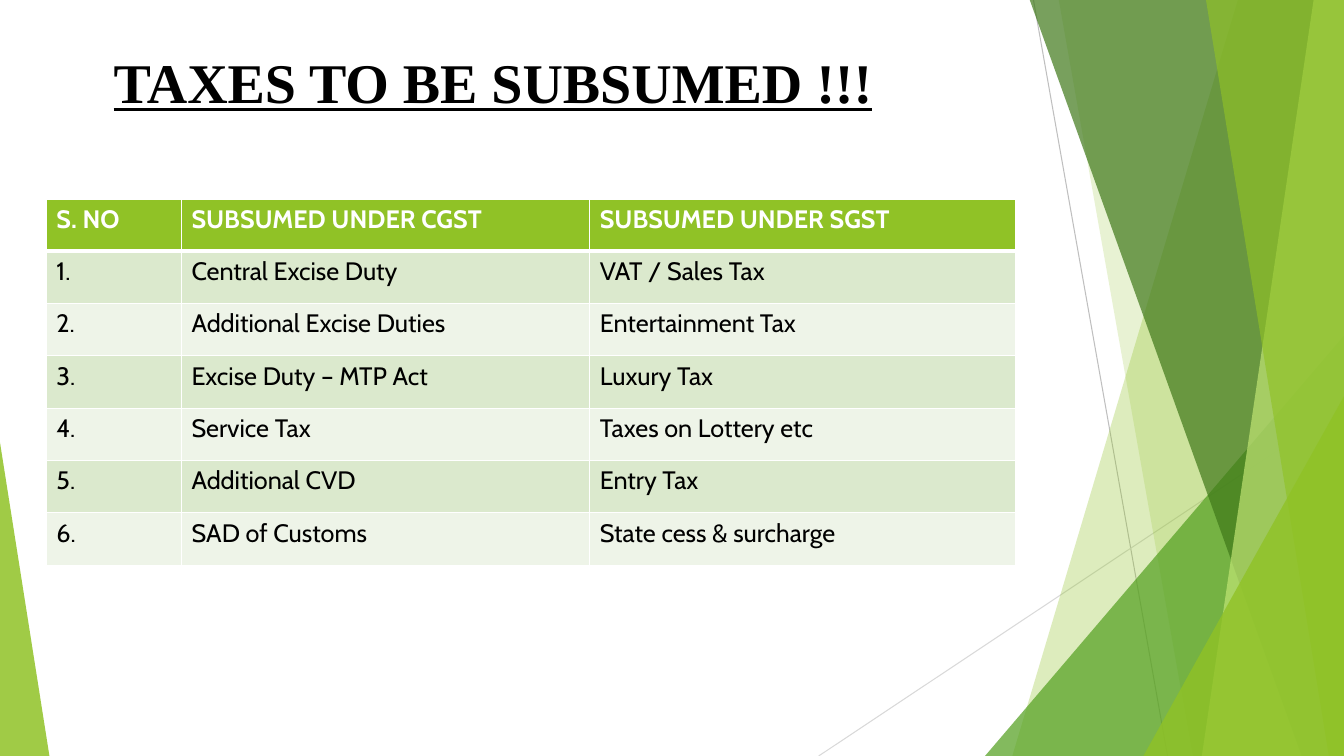
from dataclasses import dataclass

from lxml.etree import SubElement
from pptx import Presentation
from pptx.dml.color import RGBColor
from pptx.enum.shapes import MSO_CONNECTOR, MSO_SHAPE
from pptx.oxml.ns import qn
from pptx.util import Inches, Pt

COLORS = {
    "white": "FFFFFF",
    "black": "000000",
    "lime": "90C226",
    "green": "54A021",
    "forest": "3F7819",
    "pale_lime": "C0E474",
    "band_dark": "DBE9CD",
    "band_light": "EEF4E8",
    "gray": "BFBFBF",
    "light_gray": "D9D9D9",
}
WIDTH, HEIGHT, BLEED = 13.33, 7.5, -0.01


@dataclass(frozen=True)
class Ray:
    start: tuple[float, float]
    end: tuple[float, float]
    color: str


@dataclass(frozen=True)
class Facet:
    top_x: float
    foot_x: float
    color: str
    opacity: int


@dataclass(frozen=True)
class Wedge:
    left: float
    top: float
    width: float
    apex: float
    color: str
    opacity: int


RAYS = [
    Ray((10.25, 0), (11.58, HEIGHT), "gray"),
    Ray((WIDTH, 4.03), (8.12, HEIGHT), "light_gray"),
]
PANES = [
    Facet(12.28, 10.04, "lime", 30),
    Facet(10.5, 11.83, "lime", 20),
    Wedge(9.77, 3.33, 3.56, 1, "green", 72),
    Facet(10.21, 12.91, "forest", 70),
    Facet(13.03, 11.92, "pale_lime", 70),
    Facet(11.96, 13.18, "lime", 65),
    Wedge(11.34, 3.93, 1.99, 1, "lime", 80),
    Wedge(0, 4.39, 0.49, 0, "lime", 85),
]
HEADINGS = ("S. NO", "SUBSUMED UNDER CGST", "SUBSUMED UNDER SGST")
TAXES = [
    ("Central Excise Duty", "VAT / Sales Tax"),
    ("Additional Excise Duties", "Entertainment Tax"),
    ("Excise Duty – MTP Act", "Luxury Tax"),
    ("Service Tax", "Taxes on Lottery etc"),
    ("Additional CVD", "Entry Tax"),
    ("SAD of Customs", "State cess & surcharge"),
]
COLUMN_WIDTHS = (1.34, 4.05, 4.22)
HEADER_HEIGHT, ROW_HEIGHT = 0.51, 0.52


def rgb(color: str) -> RGBColor:
    return RGBColor.from_string(COLORS[color])


def write_text(frame, text: str, *, size: float, font: str, color: str,
               bold: bool = False, underline: bool = False) -> None:
    frame.word_wrap = True
    run = frame.paragraphs[0].add_run()
    run.text = text
    run.font.size = Pt(size)
    run.font.name = font
    run.font.bold = bold
    run.font.underline = underline
    run.font.color.rgb = rgb(color)


def draw_ray(slide, ray: Ray) -> None:
    ends = [Inches(value) for value in (*ray.start, *ray.end)]
    line = slide.shapes.add_connector(MSO_CONNECTOR.STRAIGHT, *ends)
    line.line.color.rgb = rgb(ray.color)
    line.line.width = Pt(0.75)
    SubElement(line._element.spPr, qn("a:effectLst"))


def draw_pane(slide, pane: Facet | Wedge) -> None:
    if isinstance(pane, Facet):
        corners = [(WIDTH, BLEED), (WIDTH, HEIGHT), (pane.foot_x, HEIGHT)]
        outline = slide.shapes.build_freeform(Inches(pane.top_x), Inches(BLEED))
        outline.add_line_segments([(Inches(x), Inches(y)) for x, y in corners])
        shape = outline.convert_to_shape()
    else:
        shape = slide.shapes.add_shape(
            MSO_SHAPE.ISOSCELES_TRIANGLE, Inches(pane.left), Inches(pane.top),
            Inches(pane.width), Inches(HEIGHT - pane.top))
        shape.adjustments[0] = pane.apex
    shape.shadow.inherit = False
    shape.line.fill.background()
    shape.fill.solid()
    shape.fill.fore_color.rgb = rgb(pane.color)
    tint = shape._element.spPr.find(qn("a:solidFill"))[0]
    SubElement(tint, qn("a:alpha"), val=str(pane.opacity * 1000))


def set_borders(cell, **widths: float) -> None:
    properties = cell._tc.get_or_add_tcPr()
    for side in ("L", "R", "T", "B"):
        width = Pt(widths.get(side, 1))
        border = SubElement(properties, qn(f"a:ln{side}"), w=str(width))
        fill = SubElement(border, qn("a:solidFill"))
        SubElement(fill, qn("a:srgbClr"), val=COLORS["white"])


def draw_tax_table(slide) -> None:
    rows = [HEADINGS]
    rows += [(f"{number}.", *pair) for number, pair in enumerate(TAXES, 1)]
    table = slide.shapes.add_table(
        len(rows), len(HEADINGS), Inches(0.46), Inches(1.98),
        Inches(sum(COLUMN_WIDTHS)),
        Inches(HEADER_HEIGHT + ROW_HEIGHT * len(TAXES))).table
    for column, width in zip(table.columns, COLUMN_WIDTHS):
        column.width = Inches(width)
    for r, entries in enumerate(rows):
        header = r == 0
        table.rows[r].height = Inches(HEADER_HEIGHT if header else ROW_HEIGHT)
        band = "lime" if header else "band_dark" if r % 2 else "band_light"
        for c, entry in enumerate(entries):
            cell = table.cell(r, c)
            set_borders(cell, B=3 if header else 1, T=3 if r == 1 else 1)
            cell.fill.solid()
            cell.fill.fore_color.rgb = rgb(band)
            write_text(cell.text_frame, entry, size=18, font="Cabin", bold=header,
                       color="white" if header else "black")


def main() -> None:
    deck = Presentation()
    deck.slide_width, deck.slide_height = Inches(WIDTH), Inches(HEIGHT)
    slide = deck.slides.add_slide(deck.slide_layouts[6])
    for ray in RAYS:
        draw_ray(slide, ray)
    for pane in PANES:
        draw_pane(slide, pane)
    draw_tax_table(slide)
    title = slide.shapes.add_textbox(
        Inches(1.03), Inches(0.42), Inches(8.47), Inches(0.77))
    write_text(title.text_frame, "TAXES TO BE SUBSUMED !!!", size=40,
               font="Times New Roman", color="black", bold=True, underline=True)
    deck.save("out.pptx")


if __name__ == "__main__":
    main()
